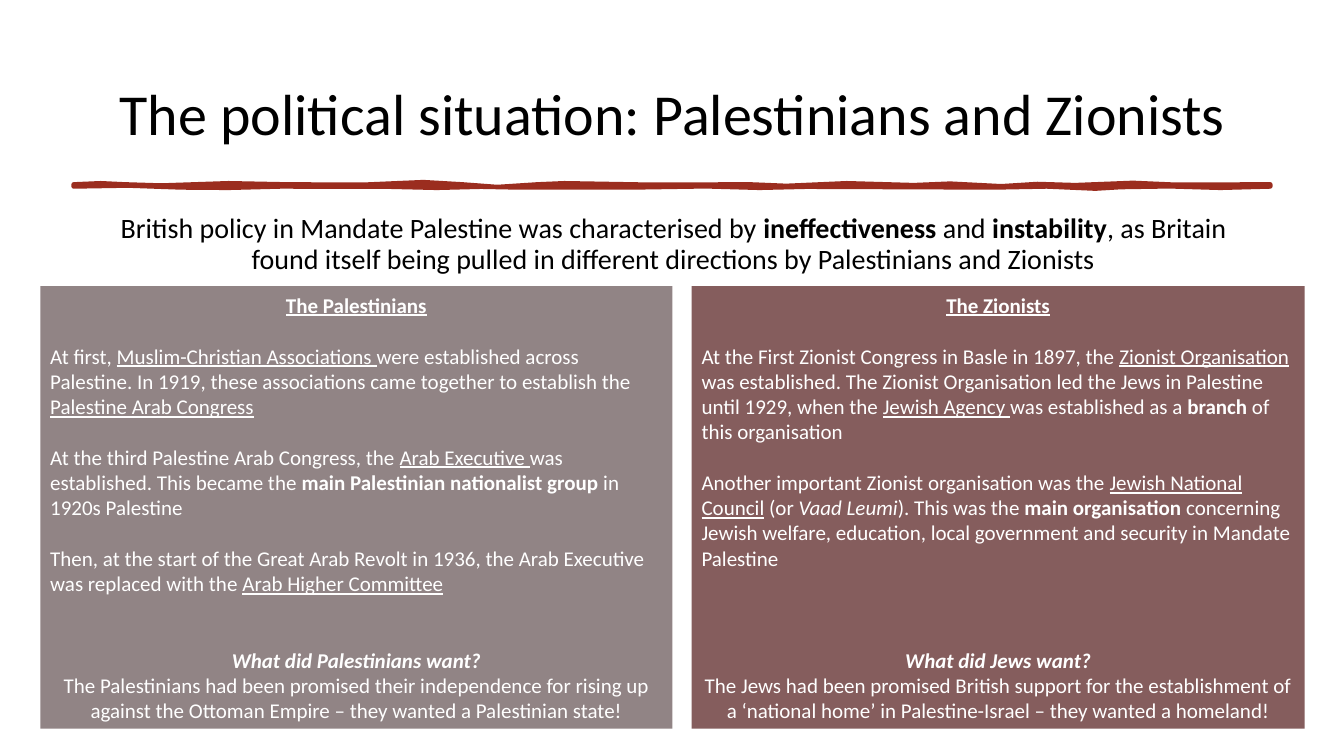
import pptx
import pptx.dml.color
import pptx.enum.shapes
import pptx.enum.text
import pptx.util

COLORS = {"ink": "000000", "paper": "FFFFFF", "rule": "9B2D1F",
          "palestinians": "918485", "zionists": "855D5D"}
ALIGN = pptx.enum.text.PP_ALIGN
ANCHOR = pptx.enum.text.MSO_ANCHOR
BOLD = {"bold": True}
ITALIC = {"italic": True}
UNDERLINE = {"underline": True}
PLAIN = {}
PANEL_SIZE = 15
BLANK_LINE = 18.3

RULE_TOP = [(5.48, 24.4), (7.5, 24.25), (9.3, 24.4), (12, 24.55), (17, 24.25),
            (21.3, 24.4), (27, 24.45), (31.5, 24.1), (34.4, 24.4), (37, 24.75),
            (40, 24.4), (42, 24.25), (48.5, 24.45), (55.8, 24.4), (58.5, 24.6),
            (63, 24.25), (68, 24.5), (70.7, 24.3), (74.5, 24.65), (77.2, 24.35),
            (80, 24.5), (84.3, 24.2), (87.5, 24.45), (94.52, 24.4)]
RULE_BOTTOM = [(94.52, 24.67), (90.8, 24.85), (87, 24.65), (83.4, 24.75),
               (81.5, 24.95), (77.9, 24.67), (74, 24.8), (67, 24.75),
               (60, 24.7), (56.5, 24.85), (52.5, 24.65), (47, 24.8),
               (38.6, 24.8), (35.8, 24.7), (32.5, 24.85), (29, 24.7),
               (20.9, 24.67), (17, 24.85), (13.5, 24.8), (9.5, 24.55),
               (5.48, 24.67)]


def color(name):
    return pptx.dml.color.RGBColor.from_string(COLORS[name])


def add_span(para, text, size=PANEL_SIZE, ink="ink", bold=False, italic=False, underline=False):
    span = para.add_run()
    span.text = text
    font = span.font
    font.name = "Calibri"
    font.size = pptx.util.Pt(size)
    font.color.rgb = color(ink)
    font.bold, font.italic, font.underline = bold, italic, underline


class Page:
    """Draws styled elements on one slide, placed on a grid of 100 columns and 100 rows."""

    def __init__(self, deck):
        self.slide = deck.slides.add_slide(deck.slide_layouts[6])
        self.column = deck.slide_width / 100
        self.row = deck.slide_height / 100

    def place(self, left, top, width, height):
        return (round(left * self.column), round(top * self.row),
                round(width * self.column), round(height * self.row))

    def text(self, area, spans, size, anchor):
        box = self.slide.shapes.add_textbox(*self.place(*area))
        frame = box.text_frame
        frame.word_wrap = True
        frame.vertical_anchor = anchor
        para = frame.paragraphs[0]
        para.alignment = ALIGN.CENTER
        para.line_spacing = 0.9
        for words, style in spans:
            add_span(para, words, size=size, **style)

    def rule(self, points):
        outline = [(round(x * self.column), round(y * self.row)) for x, y in points]
        builder = self.slide.shapes.build_freeform(*outline[0])
        builder.add_line_segments(outline[1:], close=True)
        stroke = builder.convert_to_shape()
        stroke.shadow.inherit = False
        stroke.fill.solid()
        stroke.fill.fore_color.rgb = color("rule")
        stroke.line.color.rgb = color("rule")
        stroke.line.width = pptx.util.Pt(3.25)

    def panel(self, area, fill, paragraphs):
        rectangle = pptx.enum.shapes.MSO_SHAPE.RECTANGLE
        box = self.slide.shapes.add_shape(rectangle, *self.place(*area))
        box.shadow.inherit = False
        box.fill.solid()
        box.fill.fore_color.rgb = color(fill)
        box.line.fill.background()
        frame = box.text_frame
        frame.word_wrap = True
        frame.vertical_anchor = ANCHOR.MIDDLE
        for index, (alignment, blank_lines, spans) in enumerate(paragraphs):
            para = frame.add_paragraph() if index else frame.paragraphs[0]
            para.alignment = alignment
            para.space_before = pptx.util.Pt(blank_lines * BLANK_LINE)
            for words, style in spans:
                add_span(para, words, ink="paper", **style)


PALESTINIANS = [
    (ALIGN.CENTER, 0, [("The Palestinians", BOLD | UNDERLINE)]),
    (ALIGN.LEFT, 1, [
        ("At first, ", PLAIN), ("Muslim-Christian Associations ", UNDERLINE),
        ("were established across Palestine. In 1919, these associations came "
         "together to establish the ", PLAIN),
        ("Palestine Arab Congress", UNDERLINE)]),
    (ALIGN.LEFT, 1, [
        ("At the third Palestine Arab Congress, the ", PLAIN),
        ("Arab Executive ", UNDERLINE),
        ("was established. This became the ", PLAIN),
        ("main Palestinian nationalist group ", BOLD),
        ("in 1920s Palestine", PLAIN)]),
    (ALIGN.LEFT, 1, [
        ("Then, at the start of the Great Arab Revolt in 1936, the Arab "
         "Executive was replaced with the ", PLAIN),
        ("Arab Higher Committee", UNDERLINE)]),
    (ALIGN.CENTER, 2, [("What did Palestinians want?", BOLD | ITALIC)]),
    (ALIGN.CENTER, 0, [
        ("The Palestinians had been promised their independence for rising up "
         "against the Ottoman Empire – they wanted a Palestinian state!", PLAIN)]),
]

ZIONISTS = [
    (ALIGN.CENTER, 0, [("The Zionists", BOLD | UNDERLINE)]),
    (ALIGN.LEFT, 1, [
        ("At the First Zionist Congress in Basle in 1897, the ", PLAIN),
        ("Zionist Organisation ", UNDERLINE),
        ("was established. The Zionist Organisation led the Jews in Palestine "
         "until 1929, when the ", PLAIN),
        ("Jewish Agency ", UNDERLINE), ("was established as a ", PLAIN),
        ("branch", BOLD), (" of this organisation", PLAIN)]),
    (ALIGN.LEFT, 1, [
        ("Another important Zionist organisation was the ", PLAIN),
        ("Jewish National Council", UNDERLINE), (" (or ", PLAIN),
        ("Vaad Leumi", ITALIC), ("). This was the ", PLAIN),
        ("main organisation ", BOLD),
        ("concerning Jewish welfare, education, local government and security "
         "in Mandate Palestine", PLAIN)]),
    (ALIGN.CENTER, 3, [("What did Jews want?", BOLD | ITALIC)]),
    (ALIGN.CENTER, 0, [
        ("The Jews had been promised British support for the establishment of a "
         "‘national home’ in Palestine-Israel – they wanted a homeland!", PLAIN)]),
]

POLICY = [
    ("British policy in Mandate Palestine was characterised by ", PLAIN),
    ("ineffectiveness", BOLD), (" and ", PLAIN), ("instability", BOLD),
    (", as Britain found itself being pulled in different directions by "
     "Palestinians and Zionists", PLAIN),
]


def main():
    deck = pptx.Presentation()
    deck.slide_width = pptx.util.Inches(13.33)
    deck.slide_height = pptx.util.Inches(7.5)
    page = Page(deck)
    title = [("The political situation: Palestinians and Zionists", PLAIN)]
    page.text((6.9, 5.73, 86.25, 19.33), title, 41.4, ANCHOR.MIDDLE)
    page.rule(RULE_TOP + RULE_BOTTOM)
    page.text((6.98, 27.73, 86.25, 9.33), POLICY, 20, ANCHOR.TOP)
    page.panel((3, 37.87, 47.03, 58.53), "palestinians", PALESTINIANS)
    page.panel((51.46, 37.87, 45.61, 58.53), "zionists", ZIONISTS)
    deck.save("out.pptx")


if __name__ == "__main__":
    main()
